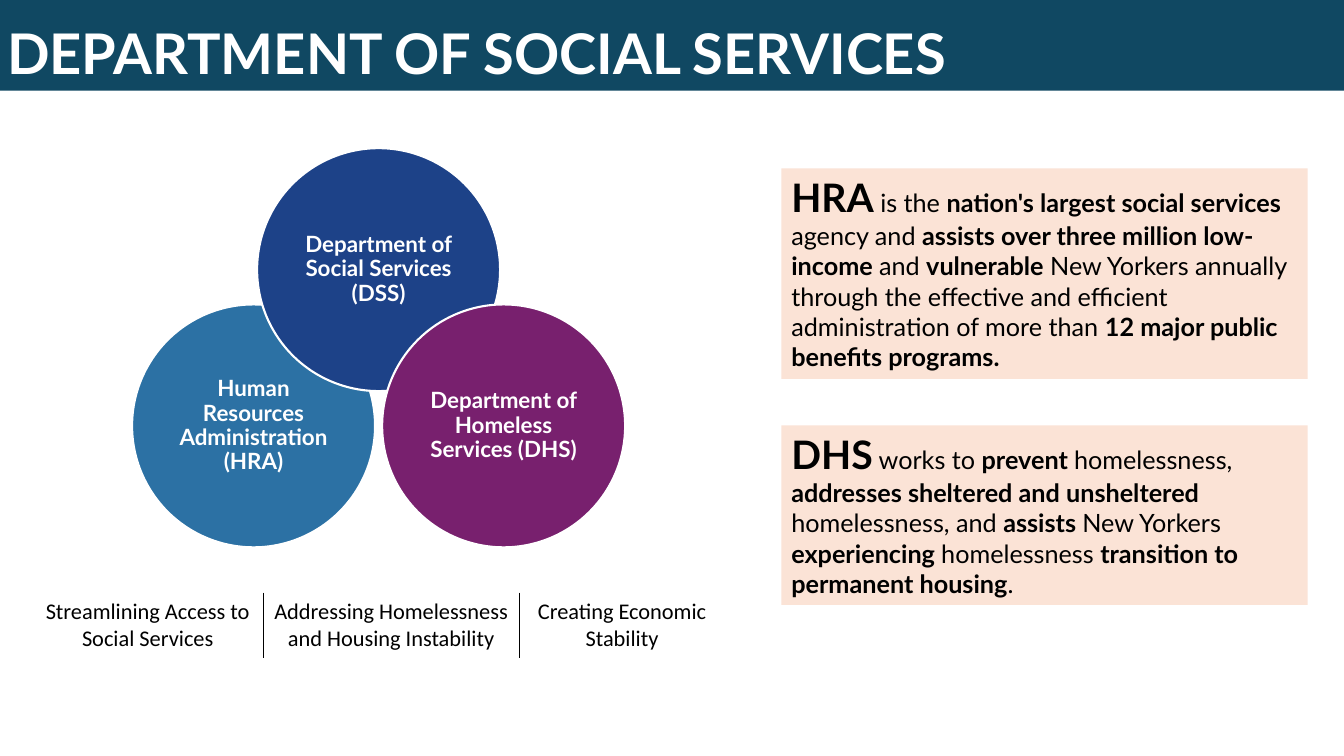
import dataclasses
import typing

import lxml.etree
import pptx
import pptx.dml.color
import pptx.enum.shapes
import pptx.enum.text
import pptx.oxml.ns
import pptx.util

Inches = pptx.util.Inches
Pt = pptx.util.Pt
Shape = pptx.enum.shapes.MSO_SHAPE
Align = pptx.enum.text.PP_ALIGN
Anchor = pptx.enum.text.MSO_ANCHOR

COLORS = {
    "navy": "1D4288",
    "blue": "2C71A4",
    "plum": "78206E",
    "teal": "104862",
    "peach": "FBE3D6",
    "white": "FFFFFF",
    "black": "000000",
}


@dataclasses.dataclass
class Circle:
    text: str
    color: str
    left: float
    top: float


@dataclasses.dataclass
class Run:
    text: str
    bold: bool = False
    size: float = 18


@dataclasses.dataclass
class Panel:
    top: float
    height: float
    runs: list[Run]


@dataclasses.dataclass
class Goal:
    text: str
    width: float


SIDE = 2.41
STEP = 1.24
LOW = 3.02
CIRCLES = [
    Circle("Human Resources Administration (HRA)", "blue", 1.31, LOW),
    Circle("Department of Social Services (DSS)", "navy", 1.31 + STEP, LOW - 1.55),
    Circle("Department of Homeless Services (DHS)", "plum", 1.31 + 2 * STEP, LOW),
]

PANELS = [
    Panel(1.67, 2.09, [
        Run("HRA", True, 28),
        Run(" is the "),
        Run("nation's largest social services ", True),
        Run("agency and "),
        Run("assists over three million low‐income ", True),
        Run("and "),
        Run("vulnerable", True),
        Run(" New Yorkers annually through the effective and efficient "
            "administration of more than "),
        Run("12 major public benefits programs.", True),
    ]),
    Panel(4.22, 1.78, [
        Run("DHS", True, 28),
        Run(" works to "),
        Run("prevent ", True),
        Run("homelessness, "),
        Run("addresses sheltered and unsheltered ", True),
        Run("homelessness, and "),
        Run("assists ", True),
        Run("New Yorkers "),
        Run("experiencing ", True),
        Run("homelessness "),
        Run("transition to permanent housing", True),
        Run("."),
    ]),
]

GOALS = [
    Goal("Streamlining Access to Social Services", 2.29),
    Goal("Addressing Homelessness and Housing Instability", 2.54),
    Goal("Creating Economic Stability", 2.04),
]


def get_color(name: str) -> pptx.dml.color.RGBColor:
    return pptx.dml.color.RGBColor.from_string(COLORS[name])


def add_run(para: typing.Any, run: Run, color: str, font: str = "Lato") -> None:
    part = para.add_run()
    part.text = run.text
    part.font.name = font
    part.font.size = Pt(run.size)
    part.font.bold = run.bold
    part.font.color.rgb = get_color(color)


def add_block(slide: typing.Any, kind: Shape, left: float, top: float,
              width: float, height: float, color: str) -> typing.Any:
    block = slide.shapes.add_shape(
        kind, Inches(left), Inches(top), Inches(width), Inches(height))
    block.shadow.inherit = False
    block.fill.solid()
    block.fill.fore_color.rgb = get_color(color)
    block.line.fill.background()
    block.text_frame.word_wrap = True
    block.text_frame.paragraphs[0].alignment = Align.LEFT
    return block


def add_title(slide: typing.Any) -> None:
    frame = add_block(slide, Shape.RECTANGLE, 0, 0, 13.33, 0.9, "teal").text_frame
    frame.vertical_anchor = Anchor.BOTTOM
    frame.margin_left = frame.margin_right = Inches(0.07)
    frame.margin_top = frame.margin_bottom = Inches(0.04)
    para = frame.paragraphs[0]
    para.line_spacing = 0.9
    add_run(para, Run("DEPARTMENT OF SOCIAL SERVICES", True, 40), "white")


def add_circle(slide: typing.Any, item: Circle) -> None:
    disc = add_block(slide, Shape.OVAL, item.left, item.top, SIDE, SIDE, item.color)
    disc.line.color.rgb = get_color("white")
    disc.line.width = Pt(1.5)
    frame = disc.text_frame
    frame.vertical_anchor = Anchor.MIDDLE
    frame.margin_left = frame.margin_right = Inches(0.07)
    frame.margin_top = frame.margin_bottom = Inches(0.07)
    para = frame.paragraphs[0]
    para.alignment = Align.CENTER
    para.line_spacing = 0.9
    add_run(para, Run(item.text, True, 16), "white")


def add_panel(slide: typing.Any, item: Panel) -> None:
    box = add_block(slide, Shape.RECTANGLE, 7.75, item.top, 5.22, item.height, "peach")
    box.text_frame.vertical_anchor = Anchor.TOP
    for run in item.runs:
        add_run(box.text_frame.paragraphs[0], run, "black")


def set_edges(cell: typing.Any, shown: set[str]) -> None:
    props = cell._tc.get_or_add_tcPr()
    name = pptx.oxml.ns.qn
    for spot, tag in enumerate(("a:lnL", "a:lnR", "a:lnT", "a:lnB")):
        edge = lxml.etree.Element(name(tag), w=str(Pt(1)))
        if tag in shown:
            fill = lxml.etree.SubElement(edge, name("a:solidFill"))
            lxml.etree.SubElement(fill, name("a:srgbClr"), val=COLORS["black"])
        else:
            lxml.etree.SubElement(edge, name("a:noFill"))
        props.insert(spot, edge)


def add_goals(slide: typing.Any) -> None:
    total = sum(goal.width for goal in GOALS)
    table = slide.shapes.add_table(
        1, len(GOALS), Inches(0.32), Inches(5.88), Inches(total), Inches(0.64)).table
    table.first_row = False
    table.horz_banding = False
    last = len(GOALS) - 1
    for col, goal in enumerate(GOALS):
        table.columns[col].width = Inches(goal.width)
        cell = table.cell(0, col)
        cell.fill.background()
        cell.vertical_anchor = Anchor.MIDDLE
        para = cell.text_frame.paragraphs[0]
        para.alignment = Align.CENTER
        add_run(para, Run(goal.text, size=16), "black", "Calibri")
        shown = {"a:lnL"} if col > 0 else set()
        if col < last:
            shown.add("a:lnR")
        set_edges(cell, shown)


def main() -> None:
    deck = pptx.Presentation()
    deck.slide_width = Inches(13.33)
    deck.slide_height = Inches(7.5)
    slide = deck.slides.add_slide(deck.slide_layouts[6])
    for item in CIRCLES:
        add_circle(slide, item)
    add_goals(slide)
    add_title(slide)
    for panel in PANELS:
        add_panel(slide, panel)
    deck.save("out.pptx")


if __name__ == "__main__":
    main()
